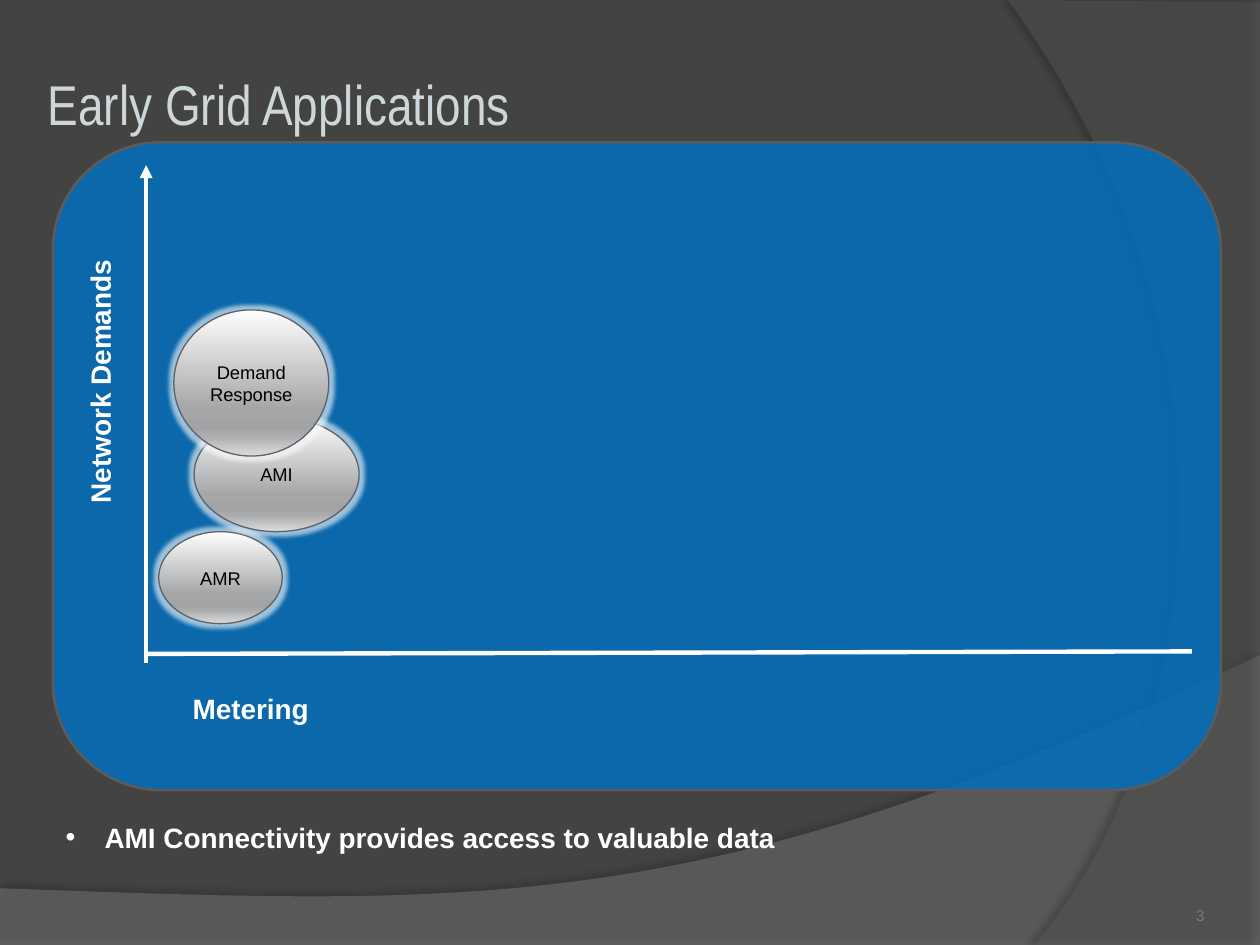
import pptx
import pptx.util
import pptx.dml.color
import pptx.enum.shapes
import pptx.enum.text
from dataclasses import dataclass
from lxml import etree

Inches = pptx.util.Inches
Pt = pptx.util.Pt
RGB = pptx.dml.color.RGBColor.from_string
Shape = pptx.enum.shapes.MSO_SHAPE
Align = pptx.enum.text.PP_ALIGN
Anchor = pptx.enum.text.MSO_ANCHOR
NS = "http://schemas.openxmlformats.org/drawingml/2006/main"


@dataclass
class Theme:
    background: str = "434342"
    wave: str = "7F7F7F"
    arc: str = "5E5E5E"
    panel: str = "0070C0"
    panel_line: str = "5A5B5D"
    bubble_line: str = "5D6269"
    bubble_stops: tuple = ((0, "FEFEFE"), (68, "A5A6A8"), (81, "A2A3A5"), (86, "ABACAE"), (100, "DCDCDD"))
    light: str = "FFFFFF"
    dark: str = "000000"
    title: str = "CDD7D9"
    number: str = "797B7E"
    body_font: str = "Arial"
    title_font: str = "Arial Narrow"
    title_size: float = 32
    label_size: float = 16
    bubble_size: float = 10.5
    number_size: float = 9


def sub(parent, tag, **attrs):
    return etree.SubElement(parent, f"{{{NS}}}{tag}", {k: str(v) for k, v in attrs.items()})


def bezier(p0, p1, p2, p3, steps=60):
    weights = ((1 - t, t) for t in (i / steps for i in range(steps + 1)))
    return [tuple(u**3 * a + 3 * u * u * t * b + 3 * u * t * t * c + t**3 * d
                  for a, b, c, d in zip(p0, p1, p2, p3)) for u, t in weights]


class SlideBuilder:
    def __init__(self, prs, theme):
        self.theme = theme
        self.s = prs.slides.add_slide(prs.slide_layouts[1])
        fill = self.s.background.fill
        fill.solid()
        fill.fore_color.rgb = RGB(theme.background)

    def place(self, sp, box):
        sp.left, sp.top, sp.width, sp.height = map(Inches, box)

    def set_text(self, sp, text, size, color, align=Align.CENTER, bold=False, font=None):
        tf = sp.text_frame
        tf.text = text
        p = tf.paragraphs[0]
        p.alignment = align
        f = p.runs[0].font
        f.name, f.size, f.bold = font or self.theme.body_font, Pt(size), bold
        f.color.rgb = RGB(color)
        return tf

    def paint(self, sp, color, alpha):
        sp.shadow.inherit = False
        sp.fill.solid()
        sp.fill.fore_color.rgb = RGB(color)
        clr = sp._element.spPr.find(f"{{{NS}}}solidFill/{{{NS}}}srgbClr")
        sub(clr, "alpha", val=alpha * 1000)

    def effect(self, sp, kind, color, alpha, **attrs):
        effects = sp._element.spPr.find(f"{{{NS}}}effectLst")
        clr = sub(sub(effects, kind, **attrs), "srgbClr", val=color)
        sub(clr, "alpha", val=alpha * 1000)

    def backdrop(self, points, color, alpha, shadow_alpha, blur, dist, angle):
        start, *rest = [(Inches(x), Inches(y)) for x, y in points]
        fb = self.s.shapes.build_freeform(*start)
        fb.add_line_segments(rest, close=True)
        sp = fb.convert_to_shape()
        self.paint(sp, color, alpha)
        sp.line.fill.background()
        self.effect(sp, "outerShdw", self.theme.dark, shadow_alpha,
                    blurRad=Pt(blur), dist=Pt(dist), dir=angle * 60000)

    def bring_forward(self, sp):
        sp._element.getparent().append(sp._element)

    def title(self, text, box):
        sp = self.s.shapes.title
        self.place(sp, box)
        self.bring_forward(sp)
        tf = self.set_text(sp, text, self.theme.title_size, self.theme.title,
                           Align.LEFT, font=self.theme.title_font)
        tf.vertical_anchor = Anchor.MIDDLE
        tf.margin_left = tf.margin_right = Inches(0.05)
        tf.paragraphs[0].line_spacing = 0.9

    def bullet(self, text, box):
        sp = self.s.placeholders[1]
        self.place(sp, box)
        self.bring_forward(sp)
        tf = self.set_text(sp, text, self.theme.label_size, self.theme.light, Align.LEFT, True)
        tf.auto_size = pptx.enum.text.MSO_AUTO_SIZE.NONE
        p = tf.paragraphs[0]
        p.space_before = Pt(0)
        pPr = p._p.get_or_add_pPr()
        pPr.set("marL", str(Inches(0.31)))
        pPr.set("indent", str(-Inches(0.31)))
        sub(pPr, "buFont", typeface=self.theme.body_font)
        sub(pPr, "buChar", char="•")

    def panel(self, box):
        sp = self.s.shapes.add_shape(Shape.ROUNDED_RECTANGLE, *map(Inches, box))
        self.paint(sp, self.theme.panel, 83)
        sp.line.color.rgb = RGB(self.theme.panel_line)
        sp.line.width = Pt(1.5)

    def axis(self, start, end, arrow=False):
        line = self.s.shapes.add_connector(
            pptx.enum.shapes.MSO_CONNECTOR.STRAIGHT, *map(Inches, start + end))
        line.line.color.rgb = RGB(self.theme.light)
        line.line.width = Pt(2.5)
        if arrow:
            sub(line._element.spPr.find(f"{{{NS}}}ln"), "tailEnd", type="triangle")
        sub(line._element.spPr, "effectLst")

    def label(self, text, box, vertical=False):
        sp = self.s.shapes.add_textbox(*map(Inches, box))
        tf = self.set_text(sp, text, self.theme.label_size, self.theme.light, bold=True)
        tf.word_wrap = False
        if vertical:
            sp._element.txBody.bodyPr.set("vert", "vert270")

    def bubble(self, text, box):
        sp = self.s.shapes.add_shape(Shape.OVAL, *map(Inches, box))
        sp.shadow.inherit = False
        sp.fill.gradient()
        sp.fill.gradient_angle = 270
        stops = sp._element.spPr.find(f"{{{NS}}}gradFill/{{{NS}}}gsLst")
        for gs in list(stops):
            stops.remove(gs)
        for pos, color in self.theme.bubble_stops:
            sub(sub(stops, "gs", pos=pos * 1000), "srgbClr", val=color)
        sp.line.color.rgb = RGB(self.theme.bubble_line)
        sp.line.width = Pt(0.75)
        self.effect(sp, "glow", self.theme.light, 60, rad=Pt(5))
        tf = self.set_text(sp, text, self.theme.bubble_size, self.theme.dark)
        tf.word_wrap = True
        tf.vertical_anchor = Anchor.MIDDLE
        tf.margin_left = tf.margin_right = Inches(0.05)

    def page_number(self, text, box):
        sp = self.s.shapes.add_textbox(*map(Inches, box))
        tf = self.set_text(sp, text, self.theme.number_size, self.theme.number, Align.RIGHT)
        tf.word_wrap = True


def main():
    prs = pptx.Presentation()
    prs.slide_width, prs.slide_height = Inches(10), Inches(7.5)
    b = SlideBuilder(prs, Theme())
    theme = b.theme

    wave = bezier((10, 5.2), (5.59, 7.29), (3.91, 7.19), (0, 7.05))
    b.backdrop(wave + [(0, 7.5), (10, 7.5)], theme.wave, 45, 35, 4, 3.5, 270)
    arc = bezier((8.21, 7.5), (9.35, 6.19), (10.18, 3), (8, 0))
    b.backdrop(arc + [(10, 0.02), (10, 7.5)], theme.arc, 40, 45, 4, 4, 180)
    b.page_number("3", (8.66, 7.14, 1, 0.25))
    b.title("Early Grid Applications", (0.33, 0.24, 8.94, 1.22))

    b.panel((0.42, 1.13, 9.27, 5.14))
    b.axis((9.46, 5.17), (1.16, 5.19))
    b.axis((1.16, 5.26), (1.16, 1.31), arrow=True)
    b.label("Metering", (1.42, 5.44, 1.14, 0.37))
    b.label("Network Demands", (0.61, 2, 0.47, 2.06), vertical=True)
    for text, box in (
        ("AMR", (1.26, 4.22, 0.98, 0.73)),
        ("AMI", (1.54, 3.31, 1.31, 0.91)),
        ("Demand Response", (1.38, 2.46, 1.23, 1.16)),
    ):
        b.bubble(text, box)

    b.bullet("AMI Connectivity provides access to valuable data", (0.42, 6.46, 5.89, 0.37))
    prs.save("out.pptx")


if __name__ == "__main__":
    main()
